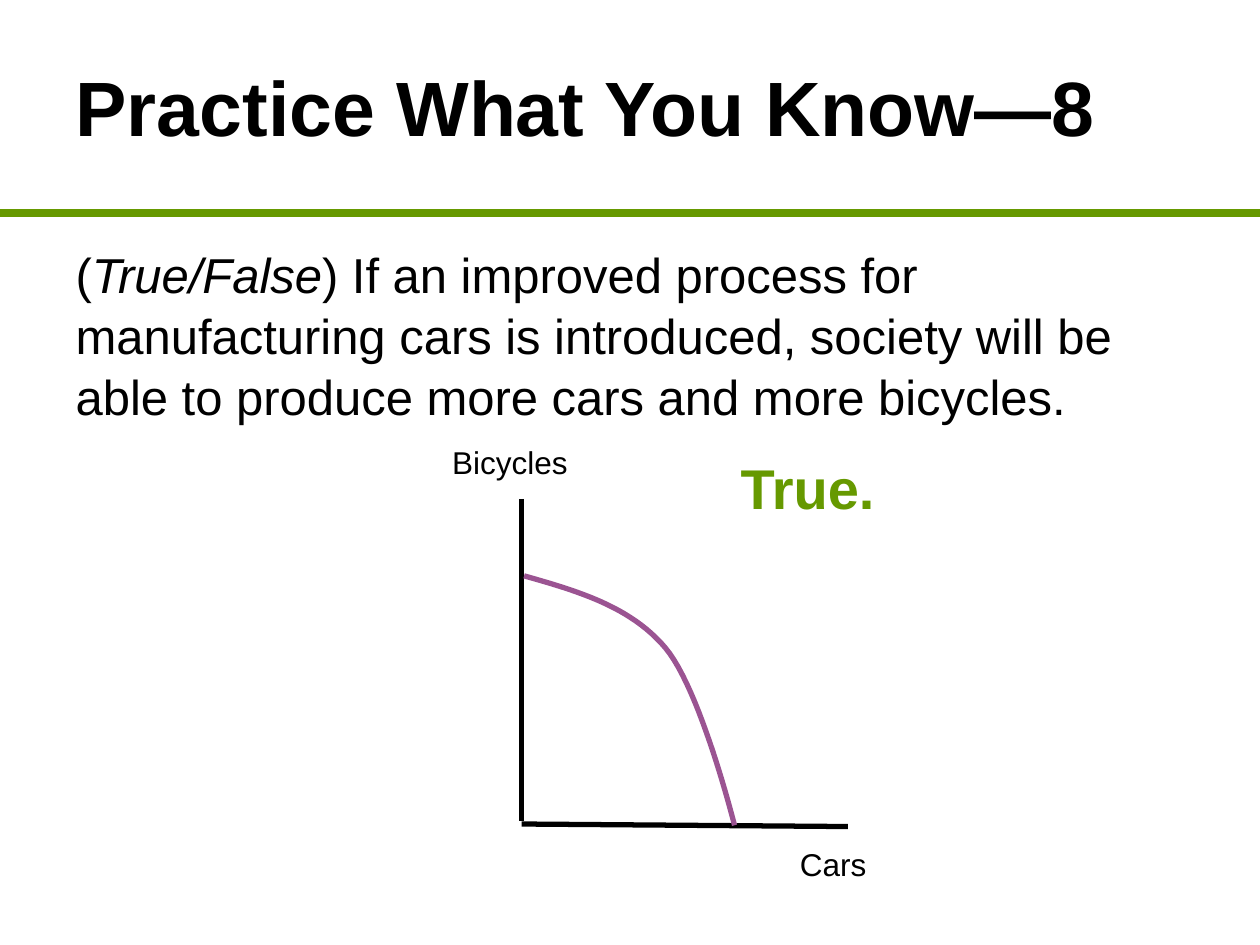
from lxml import etree
from pptx import Presentation
from pptx.dml.color import RGBColor
from pptx.enum.shapes import MSO_CONNECTOR
from pptx.enum.text import MSO_ANCHOR, PP_ALIGN
from pptx.oxml.ns import qn
from pptx.util import Inches, Pt

STRAIGHT = MSO_CONNECTOR.STRAIGHT
LEFT = PP_ALIGN.LEFT
MIDDLE, TOP = MSO_ANCHOR.MIDDLE, MSO_ANCHOR.TOP
BLACK, GREEN, PURPLE = "000000", "669900", "9B5492"
CURVES = [
    [(4.16, 4.57), (4.58, 4.69), (5, 4.81), (5.28, 5.14)],
    [(5.28, 5.14), (5.56, 5.47), (5.83, 6.55), (5.83, 6.55)],
]
STEPS = 24


def color(code):
    """Turn a hex string into a colour."""
    return RGBColor.from_string(code)


def style(run, size, code=BLACK, bold=False, italic=False):
    """Set the font of a run."""
    font = run.font
    font.name, font.size = "Arial", Pt(size)
    font.bold, font.italic = bold, italic
    font.color.rgb = color(code)


def place(shape, left, top, width, height):
    """Move and size a shape."""
    shape.left, shape.top = Inches(left), Inches(top)
    shape.width, shape.height = Inches(width), Inches(height)


def add_title(slide, text):
    """Fill the title placeholder."""
    title = slide.shapes.title
    place(title, 0.5, 0, 9, 1.67)
    frame = title.text_frame
    frame.text = text
    frame.vertical_anchor = MIDDLE
    line = frame.paragraphs[0]
    line.alignment = LEFT
    style(line.runs[0], 44, bold=True)


def add_body(slide, parts):
    """Fill the body placeholder with (text, italic) parts."""
    body = slide.placeholders[1]
    place(body, 0.5, 1.87, 8.77, 1.69)
    frame = body.text_frame
    frame.vertical_anchor = TOP
    line = frame.paragraphs[0]
    line.alignment = LEFT
    line.line_spacing = 1.04
    props = line._p.get_or_add_pPr()
    props.set("marL", "0")
    props.set("indent", "0")
    etree.SubElement(props, qn("a:buNone"))
    for text, italic in parts:
        run = line.add_run()
        run.text = text
        style(run, 28, italic=italic)


def add_label(slide, text, box, size, code=BLACK, bold=False):
    """Add a text box with one line."""
    label = slide.shapes.add_textbox(*map(Inches, box))
    frame = label.text_frame
    frame.word_wrap = True
    frame.text = text
    style(frame.paragraphs[0].runs[0], size, code, bold)


def add_line(slide, start, end, width, code=BLACK):
    """Add a straight line without a shadow."""
    ends = map(Inches, (*start, *end))
    line = slide.shapes.add_connector(STRAIGHT, *ends)
    line.line.color.rgb = color(code)
    line.line.width = Pt(width)
    etree.SubElement(line._element.spPr, qn("a:effectLst"))


def bezier(points, t):
    """Find the point at t on a cubic curve."""
    weights = ((1 - t) ** 3, 3 * t * (1 - t) ** 2, 3 * t * t * (1 - t), t ** 3)
    return tuple(
        Inches(sum(w * p[axis] for w, p in zip(weights, points)))
        for axis in (0, 1)
    )


def add_curve(slide, curves, width, code):
    """Draw joined cubic curves as one open outline."""
    first = bezier(curves[0], 0)
    path = slide.shapes.build_freeform(*first)
    path.add_line_segments(
        [bezier(c, n / STEPS) for c in curves for n in range(1, STEPS + 1)],
        close=False,
    )
    curve = path.convert_to_shape()
    curve.shadow.inherit = False
    curve.fill.background()
    curve.line.color.rgb = color(code)
    curve.line.width = Pt(width)


def main():
    """Build the slide and save it."""
    deck = Presentation()
    deck.slide_width, deck.slide_height = Inches(10), Inches(7.5)
    slide = deck.slides.add_slide(deck.slide_layouts[1])
    add_title(slide, "Practice What You Know—8")
    add_body(slide, [
        ("(", False),
        ("True/False", True),
        (") If an improved process for manufacturing cars is introduced, "
         "society will be able to produce more cars and more bicycles.", False),
    ])
    add_line(slide, (0, 1.69), (10, 1.69), 4.5, GREEN)
    add_label(slide, "True.", (5.78, 3.55, 3.72, 0.64), 32, GREEN, True)
    add_line(slide, (4.14, 3.96), (4.14, 6.52), 3)
    add_line(slide, (6.73, 6.56), (4.14, 6.54), 3)
    add_label(slide, "Bicycles", (3.49, 3.47, 1.4, 0.4), 18)
    add_label(slide, "Cars", (6.25, 6.66, 0.82, 0.4), 18)
    add_curve(slide, CURVES, 3, PURPLE)
    deck.save("out.pptx")


if __name__ == "__main__":
    main()
